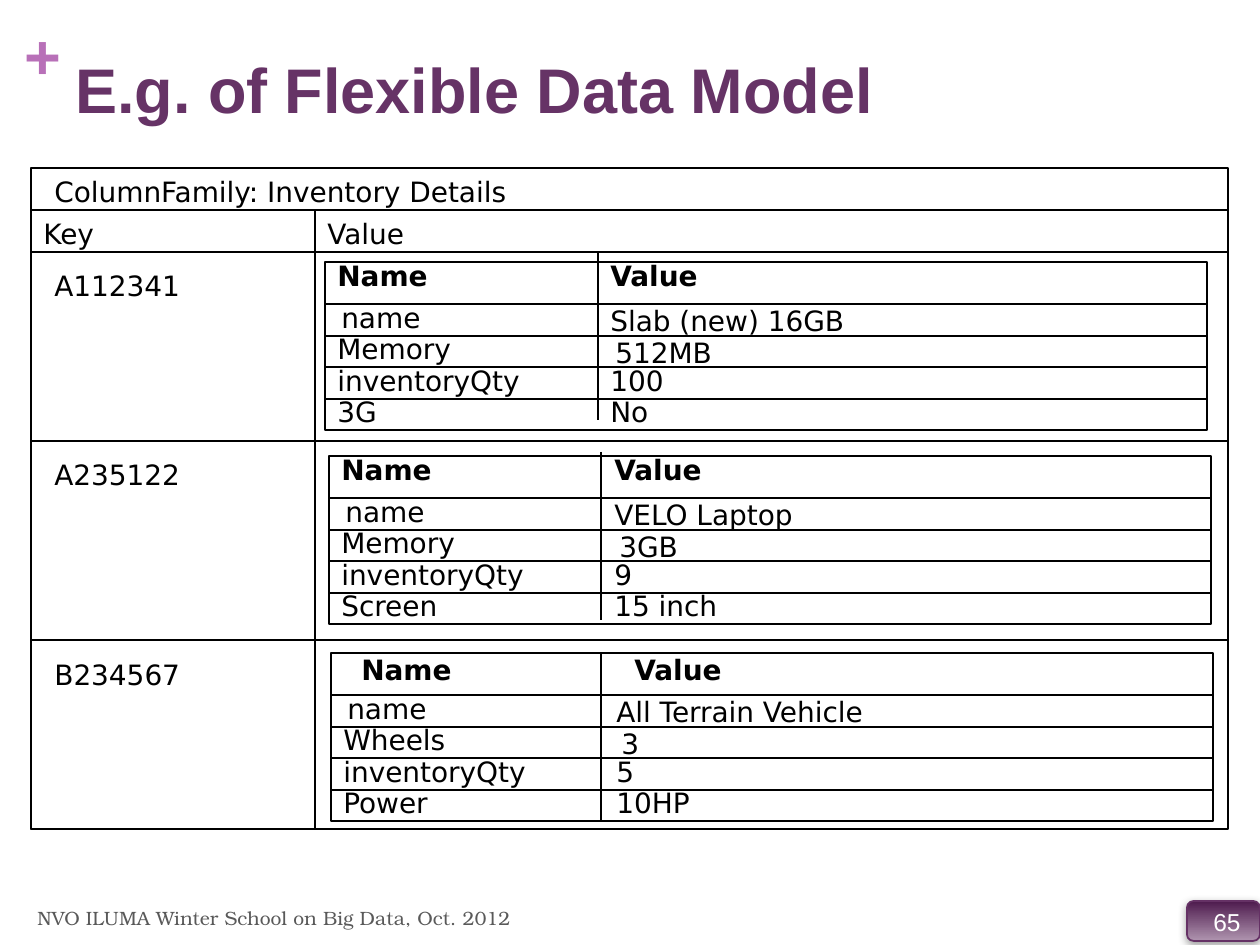
from dataclasses import dataclass

from lxml.etree import SubElement
from pptx import Presentation
from pptx.dml.color import RGBColor
from pptx.enum.shapes import MSO_CONNECTOR, MSO_SHAPE
from pptx.enum.text import MSO_ANCHOR, PP_ALIGN
from pptx.oxml.ns import qn
from pptx.util import Emu, Pt

PX = 914400 / 126


@dataclass(frozen=True)
class Theme:
    ink: str = "000000"
    paper: str = "FFFFFF"
    title: str = "663366"
    plus: str = "B870B8"
    footer: str = "595959"
    badge_top: str = "4D1A4D"
    badge_bottom: str = "AF94AF"
    badge_line: str = "653165"
    badge_shadow: str = "808080"
    heading_font: str = "Arial"
    body_font: str = "DejaVu Sans"
    footer_font: str = "TeX Gyre Bonum"
    title_size: int = 36
    body_size: int = 16
    number_size: int = 14
    footer_size: int = 11
    rule: float = 0.75


theme = Theme()
color = RGBColor.from_string

deck = Presentation()
deck.slide_width, deck.slide_height = Emu(round(1260 * PX)), Emu(round(945 * PX))
slide = deck.slides.add_slide(deck.slide_layouts[6])
shapes = slide.shapes


def scaled(*lengths):
    return [Emu(round(length * PX)) for length in lengths]


def add_text(text, place, size=theme.body_size, ink=theme.ink, font=theme.body_font, bold=False):
    """Add a one-line text box at place (left, top, width, height in px)."""
    box = shapes.add_textbox(*scaled(*place))
    frame = box.text_frame
    frame.word_wrap = True
    frame.text = text
    span = frame.paragraphs[0].runs[0]
    span.font.size, span.font.name, span.font.bold = Pt(size), font, bold
    span.font.color.rgb = color(ink)
    return frame


# Page number badge
badge = shapes.add_shape(MSO_SHAPE.ROUNDED_RECTANGLE, *scaled(1187, 901, 73, 40))
badge.fill.gradient()
badge.fill.gradient_angle = 270
for stop, shade in zip(badge.fill.gradient_stops, (theme.badge_top, theme.badge_bottom)):
    stop.color.rgb = color(shade)
badge.line.color.rgb = color(theme.badge_line)
badge.line.width = Pt(1)
badge.shadow.inherit = False
effects = badge.element.spPr.find(qn("a:effectLst"))
shadow = SubElement(effects, qn("a:outerShdw"), blurRad=str(Pt(5)), dist=str(Pt(2)),
                    dir="5400000", rotWithShape="0")
shadow_color = SubElement(shadow, qn("a:srgbClr"), val=theme.badge_shadow)
SubElement(shadow_color, qn("a:alpha"), val="75000")

number = add_text("65", (1176, 897, 77, 50), theme.number_size, theme.paper, theme.heading_font)
number.vertical_anchor = MSO_ANCHOR.MIDDLE
number.paragraphs[0].alignment = PP_ALIGN.RIGHT

# Title
plus = add_text("+", (25, 17, 37, 77), theme.title_size, theme.plus, theme.heading_font, True)
plus.margin_left = plus.margin_top = plus.margin_right = plus.margin_bottom = 0
title = add_text("E.g. of Flexible Data Model", (63, 38, 1134, 157),
                 theme.title_size, theme.title, theme.heading_font, True)
title.margin_top = scaled(13)[0]

# Frames and rules: the outer table, then one inner table per key
ROW_OFFSETS = (42, 74, 105, 137)
INNER_WIDTH, INNER_HEIGHT, VALUE_OFFSET = 882, 168, 273

# left, top, divider x, divider top, header shift (x, y), rows
inner_tables = [
    (325, 262, 598, 252, (0, -10),
     [("name", "Slab (new) 16GB"), ("Memory", "512MB"), ("inventoryQty", "100"), ("3G", "No")]),
    (329, 456, 601, 452, (0, -10),
     [("name", "VELO Laptop"), ("Memory", "3GB"), ("inventoryQty", "9"), ("Screen", "15 inch")]),
    (331, 653, 601, 653, (18, -7),
     [("name", "All Terrain Vehicle"), ("Wheels", "3"), ("inventoryQty", "5"), ("Power", "10HP")]),
]

frames = [(31, 168, 1197, 651), (31, 210, 1197, 609), (31, 252, 1197, 577), (31, 252, 284, 577)]
rules = [(31, 441, 1228, 441), (31, 640, 1228, 640), (315, 210, 315, 273)]
for left, top, divider, divider_top, _, _ in inner_tables:
    frames.append((left, top, INNER_WIDTH, INNER_HEIGHT))
    rules += [(left, top + offset, left + INNER_WIDTH, top + offset) for offset in ROW_OFFSETS]
    rules.append((divider, divider_top, divider, divider_top + INNER_HEIGHT))

for place in frames:
    frame = shapes.add_shape(MSO_SHAPE.RECTANGLE, *scaled(*place))
    frame.fill.solid()
    frame.fill.fore_color.rgb = color(theme.paper)
    frame.line.color.rgb = color(theme.ink)
    frame.line.width = Pt(theme.rule)
    frame.shadow.inherit = False

for ends in rules:
    rule = shapes.add_connector(MSO_CONNECTOR.STRAIGHT, *scaled(*ends))
    rule.line.color.rgb = color(theme.ink)
    rule.line.width = Pt(theme.rule)
    SubElement(rule.element.spPr, qn("a:effectLst"))

# Outer table text
for text, left, top, width in [
    ("ColumnFamily: Inventory Details", 42, 168, 599),
    ("Key", 31, 210, 284),
    ("Value", 315, 210, 294),
    ("A112341", 42, 262, 165),
    ("A235122", 42, 451, 165),
    ("B234567", 42, 651, 165),
]:
    add_text(text, (left, top, width, 47))

# Inner table text: (x, y) nudges of each row's name and value
NAME_NUDGES = ((4, 32), (0, 63), (0, 95), (0, 126))
VALUE_NUDGES = ((0, 35), (5, 67), (0, 95), (0, 126))
for left, top, _, _, header_shift, rows in inner_tables:
    lines = [("Name", "Value"), *rows]
    columns = [
        (left, 242, (header_shift, *NAME_NUDGES)),
        (left + VALUE_OFFSET, 590, (header_shift, *VALUE_NUDGES)),
    ]
    for column, (column_left, width, nudges) in enumerate(columns):
        for row, (line, (dx, dy)) in enumerate(zip(lines, nudges)):
            add_text(line[column], (column_left + dx, top + dy, width, 47), bold=row == 0)

footer = add_text("NVO ILUMA Winter School on Big Data, Oct. 2012", (25, 893, 844, 50),
                  theme.footer_size, theme.footer, theme.footer_font)
footer.vertical_anchor = MSO_ANCHOR.MIDDLE

deck.save("out.pptx")
